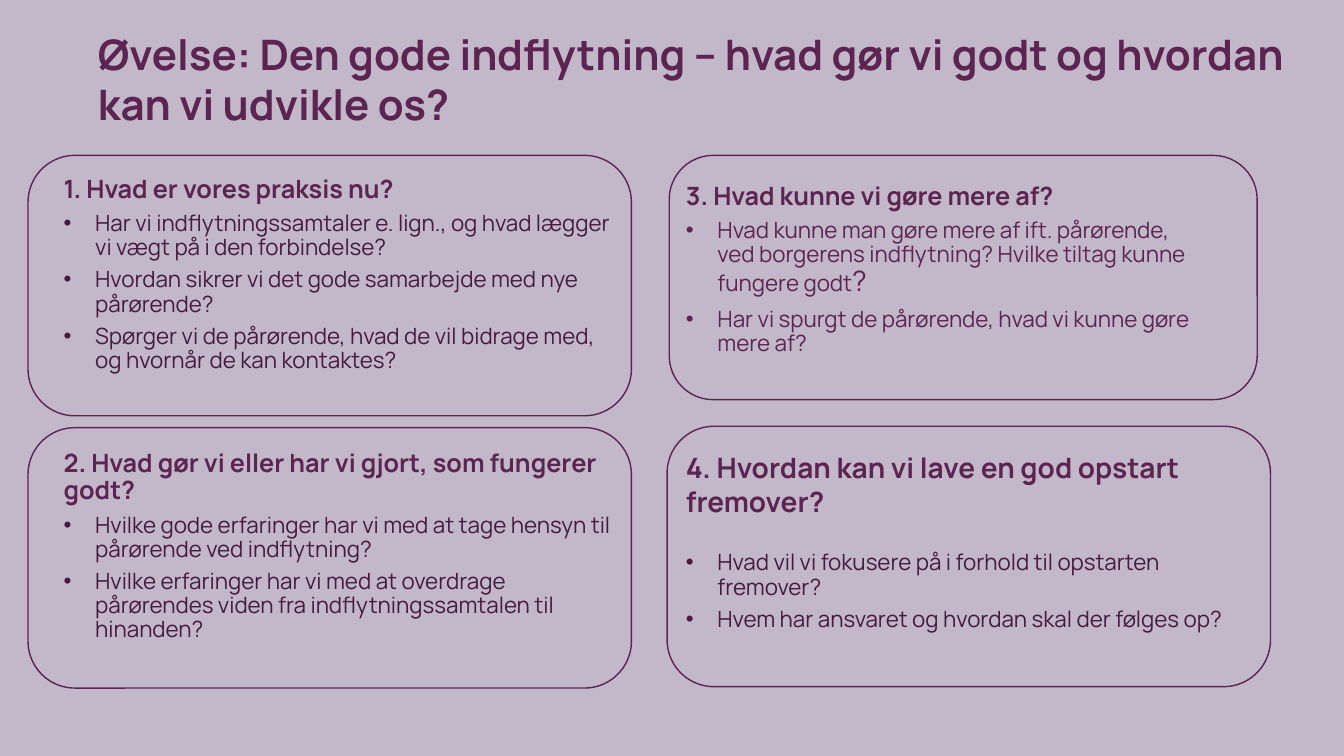
from lxml import etree
from pptx import Presentation
from pptx import util as u
from pptx.dml.color import RGBColor
from pptx.enum import shapes, text
from pptx.oxml.ns import qn

FONT = "Manrope"
LILAC, PLUM, DARK = "C3B7CA", "5C2551", "451C3D"
INDENT = 22.5

QUESTIONS = [
    dict(frame=(20, 111, 431, 186), area=(45.5, 126, 396, 174),
         heading="1. Hvad er vores praksis nu?",
         bullets=["Har vi indflytningssamtaler e. lign., og hvad lægger vi vægt på i den forbindelse?",
                  "Hvordan sikrer vi det gode samarbejde med nye pårørende?",
                  "Spørger vi de pårørende, hvad de vil bidrage med, og hvornår de kan kontaktes?"]),
    dict(frame=(20, 305.5, 431, 186), area=(45.5, 322, 396, 172),
         heading="2. Hvad gør vi eller har vi gjort, som fungerer godt?",
         bullets=["Hvilke gode erfaringer har vi med at tage hensyn til pårørende ved indflytning?",
                  "Hvilke erfaringer har vi med at overdrage pårørendes viden fra "
                  "indflytningssamtalen til hinanden?"]),
    dict(frame=(478, 111, 420, 174.5), area=(490, 131, 373, 158),
         heading="3. Hvad kunne vi gøre mere af?", bullet_color=PLUM,
         bullets=[("Hvad kunne man gøre mere af ift. pårørende, ved borgerens indflytning? "
                   "Hvilke tiltag kunne fungere godt", "?"),
                  "Har vi spurgt de pårørende, hvad vi kunne gøre mere af?"]),
    dict(frame=(476.5, 304.5, 431, 186), area=(490, 322, 396, 187),
         heading="4. Hvordan kan vi lave en god opstart fremover?",
         heading_size=20, heading_spacing=1, heading_gap=24,
         bullets=["Hvad vil vi fokusere på i forhold til opstarten fremover?",
                  "Hvem har ansvaret og hvordan skal der følges op?"]),
]


def color(value):
    return RGBColor.from_string(value)


def points(box):
    return [u.Pt(length) for length in box]


def style(para, size, shade, bold=False):
    para.font.name = FONT
    para.font.size = u.Pt(size)
    para.font.bold = bold
    para.font.color.rgb = color(shade)


def add_bullet(para):
    props = para._p.get_or_add_pPr()
    props.set("marL", str(u.Pt(INDENT)))
    props.set("indent", str(-u.Pt(INDENT)))
    etree.SubElement(props, qn("a:buFont"), typeface="Arial")
    etree.SubElement(props, qn("a:buChar"), char="•")


def add_frame(page, kind, box, fill=None, line=None):
    frame = page.shapes.add_shape(kind, *points(box))
    frame.shadow.inherit = False
    if fill:
        frame.fill.solid()
        frame.fill.fore_color.rgb = color(fill)
    else:
        frame.fill.background()
    if line:
        frame.line.color.rgb = color(line)
        frame.line.width = u.Pt(1)
    else:
        frame.line.fill.background()
    return frame


def add_text_area(page, box):
    area = page.shapes.add_textbox(*points(box)).text_frame
    area.word_wrap = True
    area.auto_size = text.MSO_AUTO_SIZE.NONE
    area.margin_left = area.margin_right = area.margin_top = area.margin_bottom = 0
    return area


def add_title(page, box):
    para = add_text_area(page, box).paragraphs[0]
    para.text = "Øvelse: Den gode indflytning – hvad gør vi godt og hvordan kan vi udvikle os?"
    style(para, 30, PLUM, True)


def add_question(page, frame, area, heading, bullets, bullet_color=DARK,
                 heading_size=18, heading_spacing=0.9, heading_gap=6.3):
    outline = add_frame(page, shapes.MSO_SHAPE.ROUNDED_RECTANGLE, frame, line=PLUM)
    outline.adjustments[0] = 0.18
    body = add_text_area(page, area)
    para = body.paragraphs[0]
    para.text = heading
    para.line_spacing = heading_spacing
    para.space_after = u.Pt(heading_gap)
    style(para, heading_size, PLUM, True)
    for bullet in bullets:
        wording, ending = (bullet, "") if isinstance(bullet, str) else bullet
        para = body.add_paragraph()
        add_bullet(para)
        para.line_spacing = 0.9
        para.space_after = u.Pt(7 if ending else 5.6)
        para.add_run().text = wording
        style(para, 16, bullet_color)
        if ending:
            span = para.add_run()
            span.text = ending
            span.font.size = u.Pt(20)


def main():
    deck = Presentation()
    deck.slide_width, deck.slide_height = u.Pt(960), u.Pt(540)
    page = deck.slides.add_slide(deck.slide_layouts[6])
    add_frame(page, shapes.MSO_SHAPE.RECTANGLE, (0, 0, 960, 540), fill=LILAC)
    add_title(page, (70, 20, 875, 73))
    for question in QUESTIONS:
        add_question(page, **question)
    deck.save("out.pptx")


if __name__ == "__main__":
    main()
